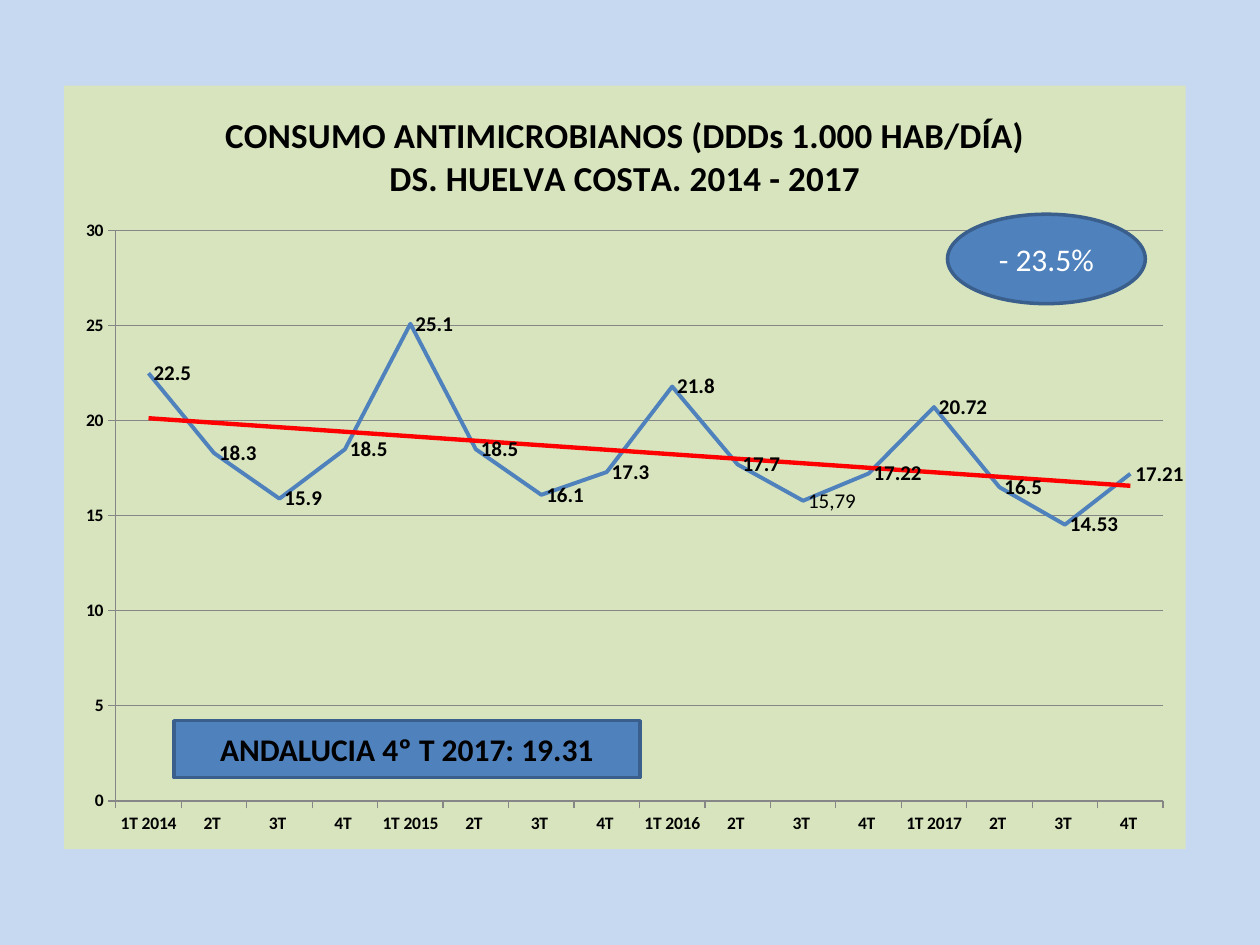
from lxml import etree
from pptx import Presentation
from pptx.chart.data import CategoryChartData
from pptx.dml.color import RGBColor
from pptx.enum.chart import XL_CHART_TYPE, XL_LABEL_POSITION, XL_MARKER_STYLE, XL_TICK_MARK
from pptx.enum.shapes import MSO_SHAPE
from pptx.enum.text import MSO_ANCHOR, PP_ALIGN
from pptx.oxml import parse_xml
from pptx.util import Inches, Pt

NAMESPACES = (
    'xmlns:c="http://schemas.openxmlformats.org/drawingml/2006/chart" '
    'xmlns:a="http://schemas.openxmlformats.org/drawingml/2006/main"'
)
BLUE, BLACK, GREY = "4F81BD", "000000", "868686"


def color(value):
    return RGBColor.from_string(value)


def set_font(font, size, bold=False, hex_color=BLACK):
    formats = {"name": "Calibri", "size": Pt(size), "bold": bold}
    for name, value in formats.items():
        setattr(font, name, value)
    font.color.rgb = color(hex_color)


# Slide and background
presentation = Presentation()
presentation.slide_width, presentation.slide_height = Inches(10), Inches(7.5)
slide = presentation.slides.add_slide(presentation.slide_layouts[6])
slide.background.fill.solid()
slide.background.fill.fore_color.rgb = color("C6D9F1")

# Quarterly consumption
quarters = []
for year in range(2014, 2018):
    quarters += [f"1T {year}", "2T ", "3T ", "4T "]
consumption = [22.5, 18.3, 15.9, 18.5, 25.1, 18.5, 16.1, 17.3,
               21.8, 17.7, 15.79, 17.22, 20.72, 16.5, 14.53, 17.21]
chart_data = CategoryChartData()
chart_data.categories = quarters
chart_data.add_series("Series 1", consumption)
chart = slide.shapes.add_chart(
    XL_CHART_TYPE.LINE, Inches(0.51), Inches(0.68), Inches(8.9), Inches(6.06), chart_data
).chart
chart.has_legend = False
set_font(chart.font, 10)

# Chart title
title_lines = ["CONSUMO ANTIMICROBIANOS (DDDs 1.000 HAB/DÍA)", "DS. HUELVA COSTA. 2014 - 2017"]
title_frame = chart.chart_title.text_frame
title_frame.text = "\n".join(title_lines)
for paragraph in title_frame.paragraphs:
    set_font(paragraph.runs[0].font, 20, bold=True)

# Axes
for axis in (chart.category_axis, chart.value_axis):
    set_font(axis.tick_labels.font, 10, bold=True)
    axis.major_tick_mark = XL_TICK_MARK.OUTSIDE
    axis.format.line.color.rgb = color(GREY)
    axis.format.line.width = Pt(0.75)
value_axis = chart.value_axis
value_axis.minimum_scale, value_axis.maximum_scale, value_axis.major_unit = 0, 30, 5
value_axis.has_major_gridlines = True
value_axis.major_gridlines.format.line.color.rgb = color(GREY)

# Line and its labels
series = chart.plots[0].series[0]
series.smooth = False
series.marker.style = XL_MARKER_STYLE.NONE
series.format.line.color.rgb = color(BLUE)
series.format.line.width = Pt(2.25)
chart.plots[0].vary_by_categories = False
labels = series.data_labels
labels.show_value = True
labels.position = XL_LABEL_POSITION.RIGHT
set_font(labels.font, 12, bold=True)
comma_label = series.points[10].data_label
comma_label.text_frame.text = "15,79"
set_font(comma_label.text_frame.paragraphs[0].runs[0].font, 12)
comma_label.position = XL_LABEL_POSITION.RIGHT

# Linear trend line
trend_line = parse_xml(
    f'<c:trendline {NAMESPACES}><c:spPr><a:ln w="{Pt(2.5)}"><a:solidFill>'
    '<a:srgbClr val="FF0000"/></a:solidFill></a:ln></c:spPr><c:trendlineType val="linear"/>'
    '<c:dispRSqr val="0"/><c:dispEq val="0"/></c:trendline>'
)
series._element.find("{*}cat").addprevious(trend_line)

# Chart background and plot position
chart_element = chart._chartSpace.find("{*}chart")
chart_element.addnext(parse_xml(
    f'<c:spPr {NAMESPACES}><a:solidFill><a:srgbClr val="D7E4BD"/></a:solidFill>'
    '<a:ln><a:noFill/></a:ln></c:spPr>'
))
plot_area = chart_element.find("{*}plotArea")
old_layout = plot_area.find("{*}layout")
if old_layout is not None:
    plot_area.remove(old_layout)
layout = parse_xml(f"<c:layout {NAMESPACES}><c:manualLayout/></c:layout>")
positions = {"layoutTarget": "inner", "xMode": "edge", "yMode": "edge",
             "x": 0.046, "y": 0.19, "w": 0.934, "h": 0.747}
for name, value in positions.items():
    tag = etree.QName(layout).namespace
    etree.SubElement(layout[0], f"{{{tag}}}{name}").set("val", str(value))
plot_area.insert(0, layout)

# Callouts: regional reference and overall change
callouts = [
    (MSO_SHAPE.RECTANGLE, 1.38, 5.72, 3.7, 0.45, "ANDALUCIA 4º T 2017: 19.31", True, BLACK),
    (MSO_SHAPE.OVAL, 7.52, 1.7, 1.57, 0.71, "- 23.5%", False, "FFFFFF"),
]
for kind, left, top, width, height, text, bold, text_color in callouts:
    shape = slide.shapes.add_shape(kind, Inches(left), Inches(top), Inches(width), Inches(height))
    shape.shadow.inherit = False
    shape.fill.solid()
    shape.fill.fore_color.rgb = color(BLUE)
    shape.line.color.rgb = color("3A5F8C")
    shape.line.width = Pt(2)
    shape.text_frame.vertical_anchor = MSO_ANCHOR.MIDDLE
    paragraph = shape.text_frame.paragraphs[0]
    paragraph.text = text
    paragraph.alignment = PP_ALIGN.CENTER
    set_font(paragraph.runs[0].font, 18, bold, text_color)

presentation.save("out.pptx")
